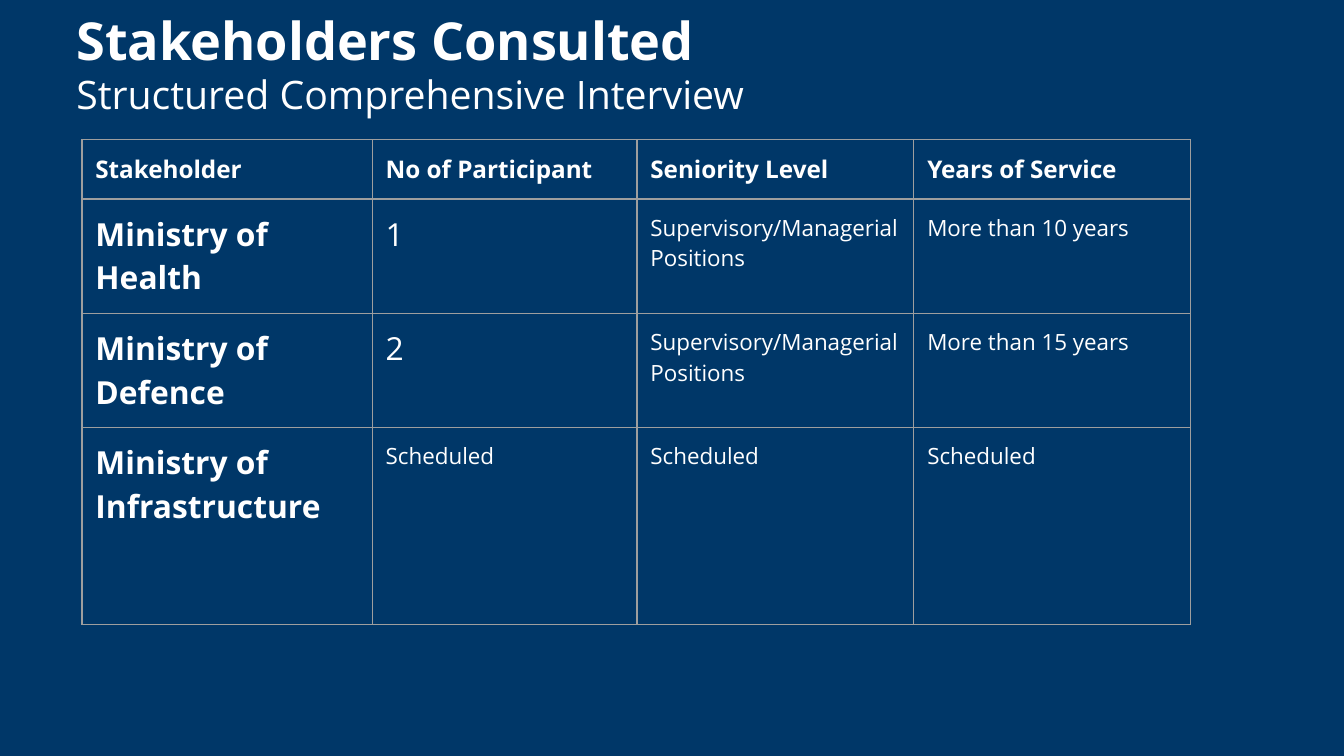
from pptx import Presentation
from pptx.dml.color import RGBColor
from pptx.enum.text import MSO_ANCHOR
from pptx.oxml.ns import qn
from pptx.util import Inches, Pt
from lxml.etree import SubElement

NAVY = RGBColor(0x00, 0x37, 0x68)
WHITE = RGBColor(0xFF, 0xFF, 0xFF)
GREY = RGBColor(0x9E, 0x9E, 0x9E)
FONT = "Open Sans"
INSET = Inches(0.1)
COLS = [2.16, 1.97, 2.06, 2.06]
ROWS = [0.44, 0.85, 0.85, 1.47]
POSITIONS = "Supervisory/Managerial Positions"
HEADER = ["Stakeholder", "No of Participant", "Seniority Level", "Years of Service"]
STAKEHOLDERS = [
    ["Ministry of Health", "1", POSITIONS, "More than 10 years"],
    ["Ministry of Defence", "2", POSITIONS, "More than 15 years"],
    ["Ministry of Infrastructure"] + ["Scheduled"] * 3,
]


def write(p, text, size, bold):
    p.text = text
    p.font.name = FONT
    p.font.size = Pt(size)
    p.font.bold = bold
    p.font.color.rgb = WHITE


def set_insets(box, top=INSET):
    box.margin_left = box.margin_right = box.margin_bottom = INSET
    box.margin_top = top


def add_heading(s, title, subtitle):
    tf = s.shapes.add_textbox(Inches(0.47), 0, Inches(7.03), Inches(1)).text_frame
    tf.word_wrap = True
    tf.vertical_anchor = MSO_ANCHOR.TOP
    set_insets(tf, Inches(0.06))
    write(tf.paragraphs[0], title, 28, True)
    write(tf.add_paragraph(), subtitle, 21, False)


def add_borders(cell):
    tc_pr = cell._tc.get_or_add_tcPr()
    for side in ("lnL", "lnR", "lnT", "lnB"):
        ln = SubElement(tc_pr, qn(f"a:{side}"), w=str(Pt(0.75)))
        fill = SubElement(ln, qn("a:solidFill"))
        SubElement(fill, qn("a:srgbClr"), val=str(GREY))


def text_style(row, col, text):
    if row == 0:
        return 13, True
    if col == 0:
        return 17, True
    return (17 if text.isdigit() else 12), False


def add_stakeholder_table(s, rows):
    frame = s.shapes.add_table(len(ROWS), len(COLS), Inches(0.61), Inches(1.04),
                               Inches(sum(COLS)), Inches(sum(ROWS)))
    table = frame.table
    for column, width in zip(table.columns, COLS):
        column.width = Inches(width)
    for row, height in zip(table.rows, ROWS):
        row.height = Inches(height)
    for i, texts in enumerate(rows):
        for j, text in enumerate(texts):
            cell = table.cell(i, j)
            set_insets(cell)
            add_borders(cell)
            cell.fill.background()
            write(cell.text_frame.paragraphs[0], text, *text_style(i, j, text))


def main():
    """Build the slide of consulted stakeholders."""
    prs = Presentation()
    prs.slide_width = Inches(10)
    prs.slide_height = prs.slide_width * 9 // 16
    s = prs.slides.add_slide(prs.slide_layouts[6])
    s.background.fill.solid()
    s.background.fill.fore_color.rgb = NAVY
    add_heading(s, "Stakeholders Consulted", "Structured Comprehensive Interview")
    add_stakeholder_table(s, [HEADER] + STAKEHOLDERS)
    prs.save("out.pptx")


if __name__ == "__main__":
    main()
